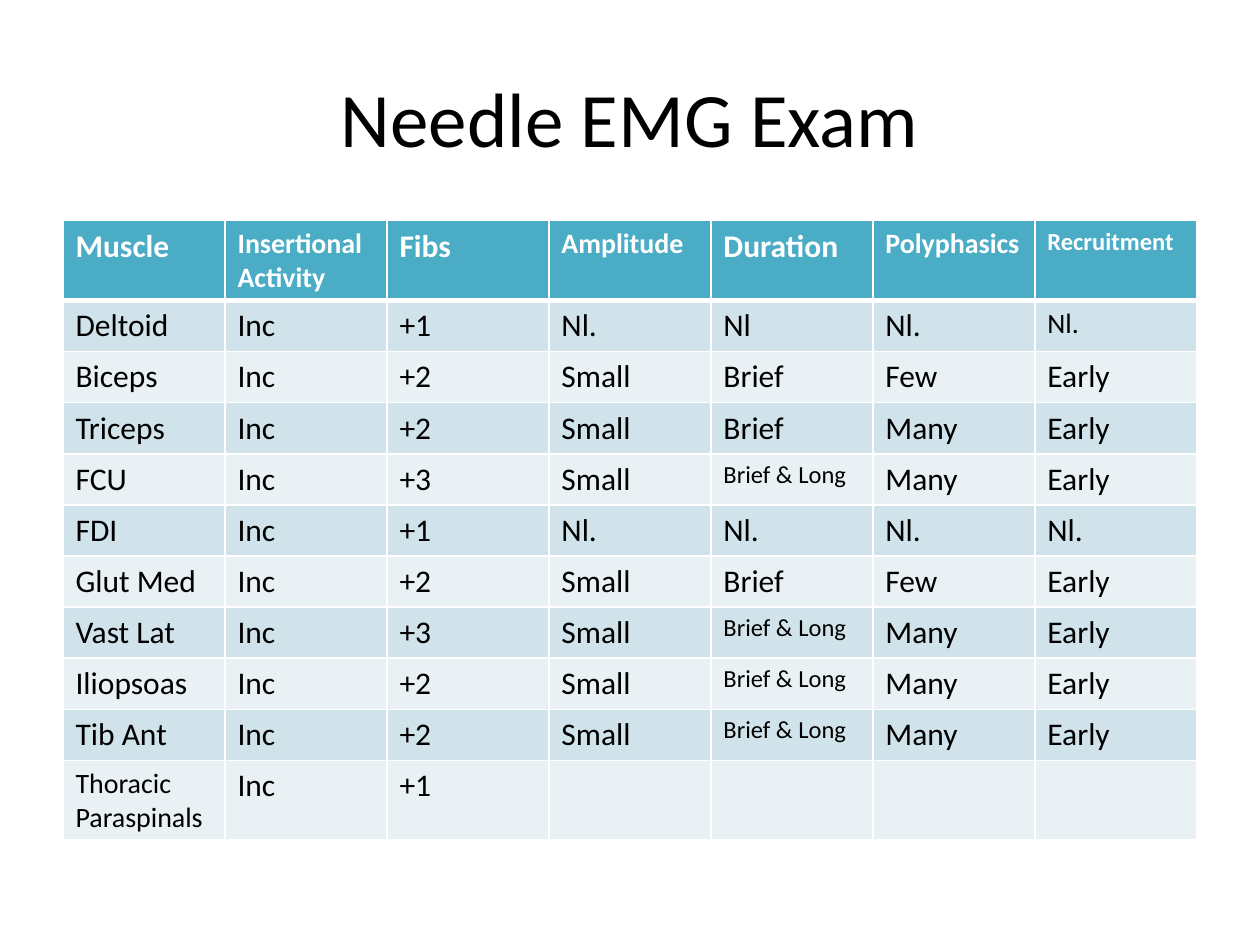
import lxml.etree
import pptx
import pptx.dml.color
import pptx.enum.text
import pptx.oxml.ns
import pptx.util
from pptx.util import Cm

FONT = "Calibri"
BLACK, WHITE = "000000", "FFFFFF"
HEADER_FILL = "4BACC6"
BAND_FILLS = ("D0E3EA", "E9F1F5")
BODY_SIZE = 18
BRIEF_LONG = ("Brief & Long", 14)

HEADINGS = [
    "Muscle", ("Insertional Activity", 16), "Fibs", ("Amplitude", 16),
    "Duration", ("Polyphasics", 16), ("Recruitment", 14),
]
FINDINGS = [
    ["Deltoid", "Inc", "+1", "Nl.", "Nl", "Nl.", ("Nl.", 16)],
    ["Biceps", "Inc", "+2", "Small", "Brief", "Few", "Early"],
    ["Triceps", "Inc", "+2", "Small", "Brief", "Many", "Early"],
    ["FCU", "Inc", "+3", "Small", BRIEF_LONG, "Many", "Early"],
    ["FDI", "Inc", "+1", "Nl.", "Nl.", "Nl.", "Nl."],
    ["Glut Med", "Inc", "+2", "Small", "Brief", "Few", "Early"],
    ["Vast Lat", "Inc", "+3", "Small", BRIEF_LONG, "Many", "Early"],
    ["Iliopsoas", "Inc", "+2", "Small", BRIEF_LONG, "Many", "Early"],
    ["Tib Ant", "Inc", "+2", "Small", BRIEF_LONG, "Many", "Early"],
    [("Thoracic Paraspinals", 16), "Inc", "+1", "", "", "", ""],
]


def color(value):
    return pptx.dml.color.RGBColor.from_string(value)


def write_text(frame, text, size=BODY_SIZE, fill=BLACK, bold=False, align=None):
    para = frame.paragraphs[0]
    para.alignment = align
    para.font.size = pptx.util.Pt(size)
    if text:
        span = para.add_run()
        span.text = text
        span.font.name = FONT
        span.font.size = pptx.util.Pt(size)
        span.font.bold = bold
        span.font.color.rgb = color(fill)


def add_title(page, text):
    box = page.shapes.add_textbox(Cm(1.27), Cm(0.76), Cm(22.86), Cm(3.18))
    frame = box.text_frame
    frame.word_wrap = True
    frame.vertical_anchor = pptx.enum.text.MSO_ANCHOR.MIDDLE
    write_text(frame, text, size=44, align=pptx.enum.text.PP_ALIGN.CENTER)


def set_borders(cell, top, bottom):
    properties = cell._tc.get_or_add_tcPr()
    qualify = pptx.oxml.ns.qn
    for side, points in (("L", 1), ("R", 1), ("T", top), ("B", bottom)):
        line = lxml.etree.SubElement(
            properties, qualify(f"a:ln{side}"), w=str(pptx.util.Pt(points)))
        solid = lxml.etree.SubElement(line, qualify("a:solidFill"))
        lxml.etree.SubElement(solid, qualify("a:srgbClr"), val=WHITE)


def fill_cell(cell, entry, row_index):
    text, size = entry if isinstance(entry, tuple) else (entry, BODY_SIZE)
    header = row_index == 0
    set_borders(cell, top=3 if row_index == 1 else 1, bottom=3 if header else 1)
    cell.fill.solid()
    cell.fill.fore_color.rgb = color(
        HEADER_FILL if header else BAND_FILLS[(row_index - 1) % 2])
    write_text(cell.text_frame, text, size=size,
               fill=WHITE if header else BLACK, bold=header)


def add_findings_table(page, rows):
    row_height = Cm(1.03)
    table = page.shapes.add_table(
        len(rows), len(rows[0]), Cm(1.27), Cm(4.45),
        Cm(22.86), row_height * len(rows)).table
    for row_index, entries in enumerate(rows):
        table.rows[row_index].height = row_height
        for column_index, entry in enumerate(entries):
            fill_cell(table.cell(row_index, column_index), entry, row_index)


def main():
    deck = pptx.Presentation()
    deck.slide_width, deck.slide_height = Cm(25.4), Cm(19.05)
    page = deck.slides.add_slide(deck.slide_layouts[6])
    add_title(page, "Needle EMG Exam")
    add_findings_table(page, [HEADINGS] + FINDINGS)
    deck.save("out.pptx")


if __name__ == "__main__":
    main()
